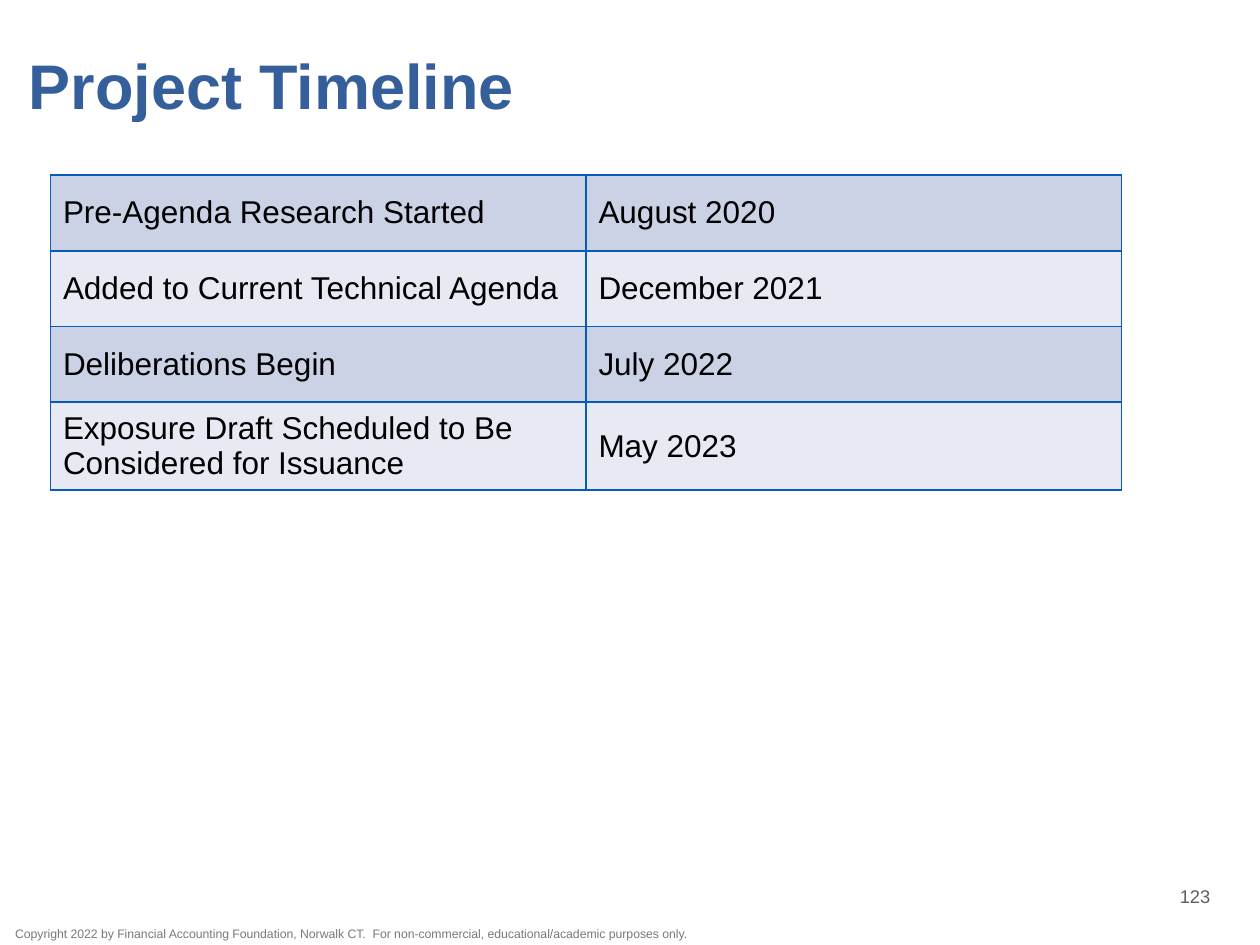
from lxml import etree
from pptx import Presentation
from pptx import util as u
from pptx.dml.color import RGBColor
from pptx.enum import text
from pptx.oxml.ns import qn

# Content
TITLE = "Project Timeline"
MILESTONES = [
    ("Pre-Agenda Research Started", "August 2020"),
    ("Added to Current Technical Agenda", "December 2021"),
    ("Deliberations Begin", "July 2022"),
    ("Exposure Draft Scheduled to Be Considered for Issuance", "May 2023"),
]
PAGE_NUMBER = "123"
COPYRIGHT = ("Copyright 2022 by Financial Accounting Foundation, Norwalk CT.  "
             "For non-commercial, educational/academic purposes only.")

THEME = {
    "font": "Arial",
    "title": (36, "355F9A"),
    "cell": (18, "000000"),
    "number": (10.5, "5F5F5F"),
    "copyright": (7, "78797B"),
    "bands": ("CCD2E6", "E7EAF3"),
    "border": "085BB8",
}

# Layout in inches
WIDTH, HEIGHT = 10, 7.5
TABLE_LEFT, TABLE_TOP = 0.4, 1.39
COLUMN_WIDTH, ROW_HEIGHT = 4.25, 0.6


def style(para, role, bold=False):
    size, color = THEME[role]
    for span in para.runs:
        span.font.name = THEME["font"]
        span.font.size = u.Pt(size)
        span.font.bold = bold
        span.font.color.rgb = RGBColor.from_string(color)


def add_text(page, words, role, place, insets=(0, 0, 0, 0), bold=False):
    box = page.shapes.add_textbox(*(u.Inches(value) for value in place))
    frame = box.text_frame
    frame.word_wrap = True
    frame.vertical_anchor = text.MSO_ANCHOR.MIDDLE
    (frame.margin_left, frame.margin_top,
     frame.margin_right, frame.margin_bottom) = (u.Inches(value) for value in insets)
    frame.text = words
    para = frame.paragraphs[0]
    style(para, role, bold)
    return para


def add_borders(cell):
    properties = cell._tc.get_or_add_tcPr()
    for position, side in enumerate(("lnL", "lnR", "lnT", "lnB")):
        line = etree.Element(qn(f"a:{side}"), w=str(u.Pt(1)))
        fill = etree.SubElement(line, qn("a:solidFill"))
        etree.SubElement(fill, qn("a:srgbClr"), val=THEME["border"])
        properties.insert(position, line)


def add_timeline(page):
    rows, columns = len(MILESTONES), len(MILESTONES[0])
    table = page.shapes.add_table(
        rows, columns, u.Inches(TABLE_LEFT), u.Inches(TABLE_TOP),
        u.Inches(columns * COLUMN_WIDTH), u.Inches(rows * ROW_HEIGHT)).table
    table.first_row = False
    for row, milestone in enumerate(MILESTONES):
        for column, words in enumerate(milestone):
            cell = table.cell(row, column)
            cell.text = words
            cell.vertical_anchor = text.MSO_ANCHOR.MIDDLE
            cell.fill.solid()
            band = THEME["bands"][row % 2]
            cell.fill.fore_color.rgb = RGBColor.from_string(band)
            add_borders(cell)
            style(cell.text_frame.paragraphs[0], "cell")


def main():
    deck = Presentation()
    deck.slide_width, deck.slide_height = u.Inches(WIDTH), u.Inches(HEIGHT)
    page = deck.slides.add_slide(deck.slide_layouts[6])

    # Copyright line
    add_text(page, COPYRIGHT, "copyright", (0.12, 7.34, 5.43, 0.14))

    # Timeline table
    add_timeline(page)

    # Title
    title = add_text(page, TITLE, "title", (0.13, 0.22, 9.49, 0.98),
                     insets=(0.1, 0, 0, 0), bold=True)
    title.line_spacing = u.Pt(37)

    # Page number
    number = add_text(page, PAGE_NUMBER, "number", (8.97, 6.95, 1.03, 0.33),
                      insets=(0.1, 0.05, 0.1, 0.05))
    number.alignment = text.PP_ALIGN.CENTER

    deck.save("out.pptx")


if __name__ == "__main__":
    main()
